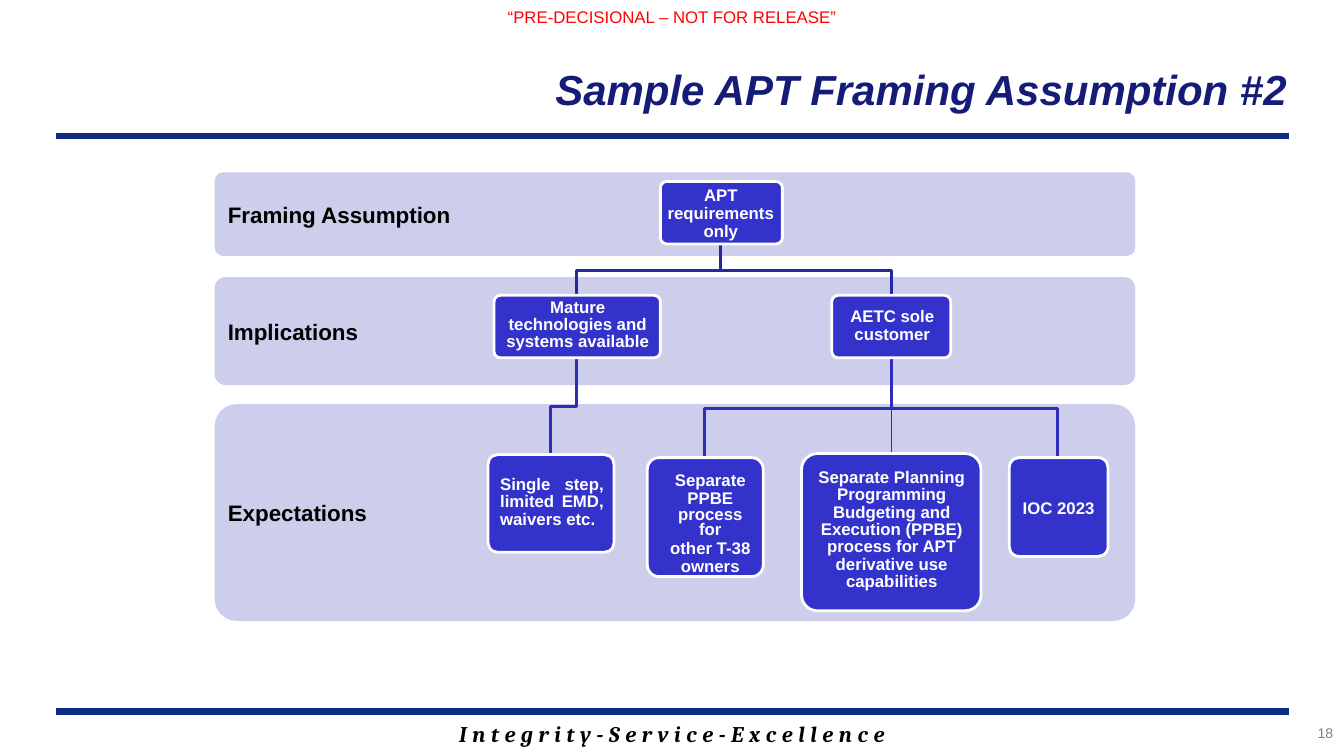
from pptx import Presentation
from pptx import util as u
from pptx.dml.color import RGBColor
from pptx.enum import shapes, text
from pptx.oxml import ns, xmlchemy

EMU_PER_PX = 9144
ALIGN = text.PP_ALIGN
ANCHOR = text.MSO_ANCHOR
CORNER = 0.1
NAVY, RULE, PANEL, BOX, WHITE = "151C77", "0C2D83", "CDCDEC", "3333CC", "FFFFFF"


def px(value):
    return u.Emu(round(value * EMU_PER_PX))


def color(value):
    return RGBColor.from_string(value)


def write(frame, content, size=12, ink="000000", bold=False, italic=False, face="Arial",
          align=ALIGN.CENTER, anchor=ANCHOR.TOP, inset=(0, 0, 0, 0), tracking=0):
    frame.word_wrap = True
    frame.auto_size = text.MSO_AUTO_SIZE.NONE
    frame.vertical_anchor = anchor
    frame.margin_left, frame.margin_top, frame.margin_right, frame.margin_bottom = map(px, inset)
    lines = [(content, 1, 0)] if isinstance(content, str) else content
    for index, (words, spacing, before) in enumerate(lines):
        para = frame.add_paragraph() if index else frame.paragraphs[0]
        para.alignment = align
        para.line_spacing = spacing
        para.space_before = u.Pt(before)
        span = para.add_run()
        span.text = words
        font = span.font
        font.name, font.size, font.bold, font.italic = face, u.Pt(size), bold, italic
        font.color.rgb = color(ink)
        if tracking:
            span.font._element.set("spc", str(tracking))


class Sheet:
    """Draws the elements of one slide in a shared style."""

    def __init__(self, deck):
        self.page = deck.slides.add_slide(deck.slide_layouts[5])

    def title(self, area, content, **style):
        box = self.page.shapes.title
        box.left, box.top, box.width, box.height = map(px, area)
        write(box.text_frame, content, **style)

    def label(self, area, content, **style):
        box = self.page.shapes.add_textbox(*map(px, area))
        write(box.text_frame, content, **style)

    def line(self, start, end, ink, weight):
        rule = self.page.shapes.add_connector(
            shapes.MSO_CONNECTOR.STRAIGHT, *map(px, start + end))
        rule.line.color.rgb = color(ink)
        rule.line.width = u.Pt(weight)
        rule._element.spPr.append(xmlchemy.OxmlElement("a:effectLst"))

    def branch(self, start, middle, end, ink):
        outline = self.page.shapes.build_freeform(*start, scale=EMU_PER_PX)
        outline.add_line_segments(
            [(start[0], middle), (end[0], middle), end], close=False)
        shape = outline.convert_to_shape()
        shape.shadow.inherit = False
        shape.fill.background()
        shape.line.color.rgb = color(ink)
        shape.line.width = u.Pt(2)

    def rounded(self, area, content, fill, inset, border=None, **style):
        shape = self.page.shapes.add_shape(
            shapes.MSO_SHAPE.ROUNDED_RECTANGLE, *map(px, area))
        shape.adjustments[0] = CORNER
        shape.shadow.inherit = False
        shape.fill.solid()
        shape.fill.fore_color.rgb = color(fill)
        if border:
            shape.line.color.rgb = color(border)
            shape.line.width = u.Pt(2)
        else:
            shape.line.fill.background()
        corner_pad = 0.29 * CORNER * min(area[2:])
        margins = [max(0, side - corner_pad) for side in inset]
        write(shape.text_frame, content, bold=True, inset=margins, **style)


PANELS = [
    ("Framing Assumption", 171, 83),
    ("Implications", 275, 107),
    ("Expectations", 401, 215),
]

BRANCHES = [
    ((715, 242), 268, (572, 293), "2727A2"),
    ((715, 242), 268, (884, 293), "2727A2"),
    ((572, 355), 403, (546, 451), "2D2DB9"),
    ((884, 355), 405, (699, 454), "2D2DB9"),
    ((884, 355), 405, (1049, 454), "2D2DB9"),
]

BOXES = [
    ((655, 180, 121, 62), (5, 4, 6, 0), ALIGN.CENTER,
     [("APT", u.Pt(13.5), 0), ("requirements only", u.Pt(12.4), 1.1)]),
    ((490, 293, 165, 62), (11, 4, 10, 0), ALIGN.CENTER,
     [("Mature technologies and systems available", 0.86, 0)]),
    ((825, 293, 118, 62), (18, 13, 16, 0), ALIGN.CENTER,
     [("AETC sole customer", u.Pt(12.5), 0)]),
    ((484, 451, 125, 97), (12, 22, 10, 0), ALIGN.JUSTIFY,
     [("Single step, limited EMD, waivers etc.", 0.86, 0)]),
    ((642, 454, 115, 118), (21, 15, 11, 0), ALIGN.CENTER,
     [("Separate PPBE", u.Pt(12.5), 0), ("process for", u.Pt(11.2), 0),
      ("other T-38 owners", u.Pt(12.5), 1)]),
    ((795, 450, 178, 156), (16, 16, 15, 0), ALIGN.CENTER,
     [("Separate Planning Programming Budgeting and Execution (PPBE) process "
       "for APT derivative use capabilities", 0.86, 0)]),
    ((1001, 454, 98, 98), (12, 40, 12, 0), ALIGN.CENTER, "IOC 2023"),
]


def main():
    deck = Presentation()
    deck.slide_width, deck.slide_height = px(1333), px(750)
    sheet = Sheet(deck)
    for height in (135, 706):
        sheet.line((56, height), (1278, height), RULE, 4.5)
    sheet.title((291, 29, 986, 85), "Sample APT Framing Assumption #2", size=30, ink=NAVY,
                bold=True, italic=True, align=ALIGN.RIGHT, anchor=ANCHOR.MIDDLE,
                inset=(0, 34, 0, 0))
    for name, top, height in PANELS:
        sheet.rounded((213, top, 913, height), name, PANEL, (13, 0, 0, 0), size=16,
                      align=ALIGN.LEFT, anchor=ANCHOR.MIDDLE)
    for start, middle, end, ink in BRANCHES:
        sheet.branch(start, middle, end, ink)
    sheet.line((884, 355), (884, 450), "2D2DB9", 0.34)
    for area, inset, align, content in BOXES:
        sheet.rounded(area, content, BOX, inset, border=WHITE, ink=WHITE, align=align)
    sheet.label((502, 7, 329, 20), "“PRE-DECISIONAL – NOT FOR RELEASE”", ink="FF0000")
    sheet.label((189, 710, 956, 37), "I n t e g r i t y - S e r v i c e - E x c e l l e n c e",
                size=16, bold=True, italic=True, face="Cambria", inset=(10, 5, 10, 5),
                tracking=25)
    sheet.label((1165, 714, 167, 33), "18", size=10, ink="7F7F7F", align=ALIGN.RIGHT,
                inset=(10, 5, 10, 5))
    deck.save("out.pptx")


if __name__ == "__main__":
    main()
